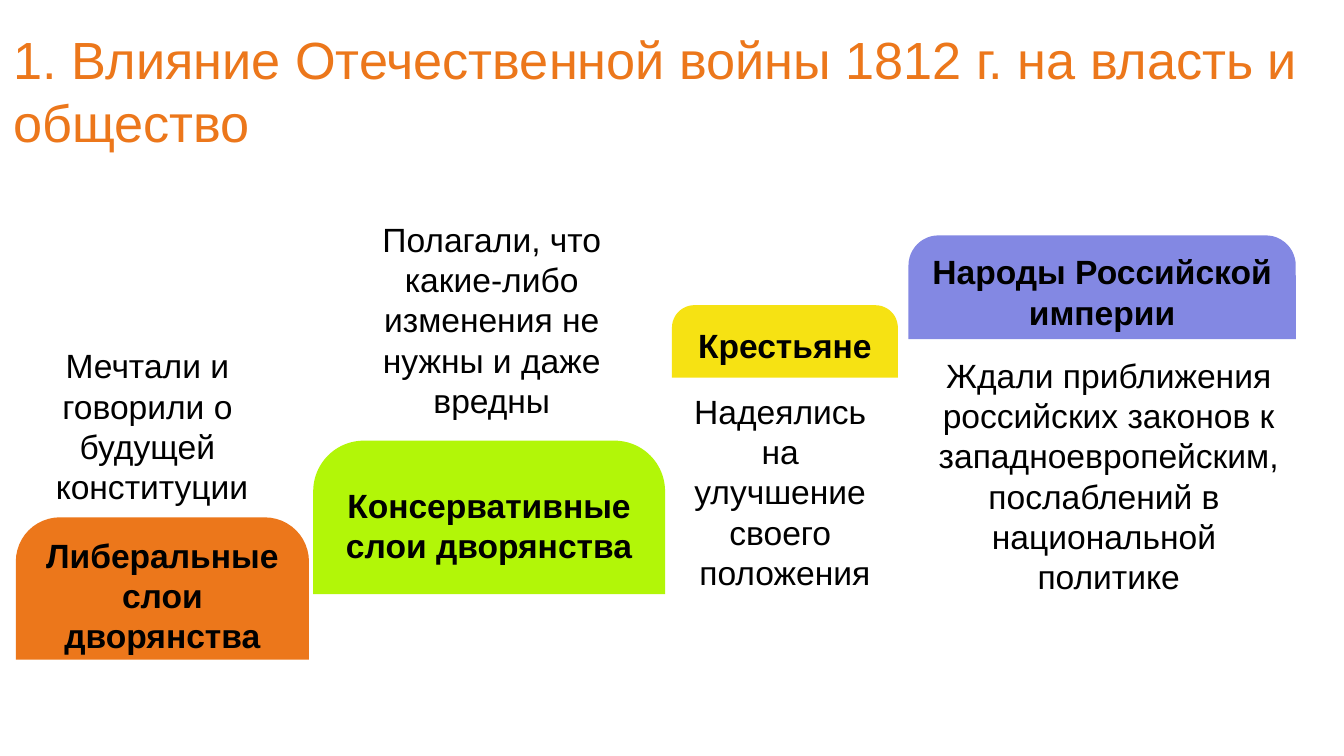
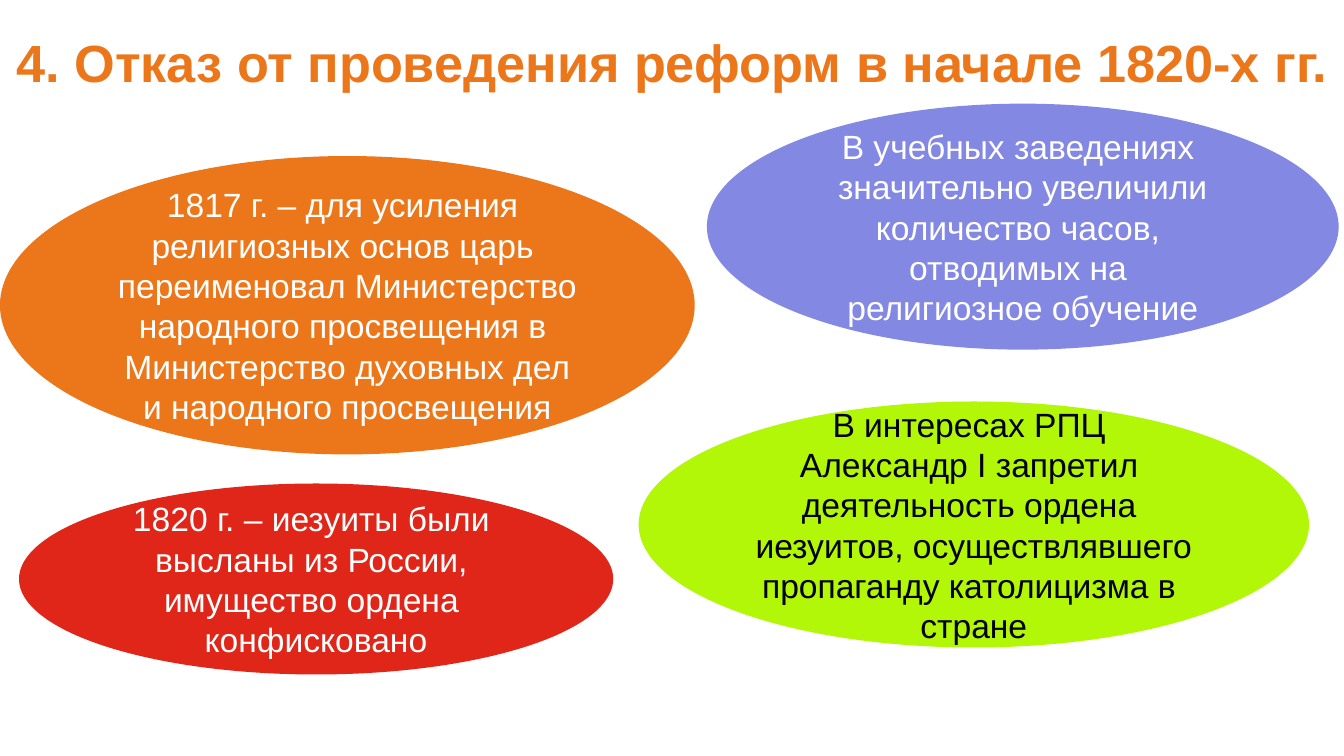
"""Build two slides on Russian society after 1812 and the end of reforms."""
import pptx
import pptx.dml.color
import pptx.enum.shapes
import pptx.enum.text
import pptx.util

Cm = pptx.util.Cm
ALIGN = pptx.enum.text.PP_ALIGN
ANCHOR = pptx.enum.text.MSO_ANCHOR
PRESET = pptx.enum.shapes.MSO_SHAPE

COLOURS = {
    "orange": "EC771B",
    "lime": "B2F608",
    "yellow": "F6E213",
    "violet": "8388E3",
    "red": "DF2619",
    "black": "000000",
    "white": "FFFFFF",
}


def write(box, lines, colour, size=18, bold=False, align=ALIGN.CENTER, anchor=ANCHOR.MIDDLE):
    """Fill a box with one paragraph per line."""
    frame = box.text_frame
    frame.word_wrap = True
    frame.vertical_anchor = anchor
    frame.text = "\n".join(lines)
    for paragraph in frame.paragraphs:
        paragraph.alignment = align
        paragraph.font.name = "Arial"
        paragraph.font.size = pptx.util.Pt(size)
        paragraph.font.bold = bold
        paragraph.font.color.rgb = pptx.dml.color.RGBColor.from_string(COLOURS[colour])


def add_block(slide, preset, place, fill):
    """Add a flat, borderless preset shape."""
    block = slide.shapes.add_shape(preset, *map(Cm, place))
    block.shadow.inherit = False
    block.fill.solid()
    block.fill.fore_color.rgb = pptx.dml.color.RGBColor.from_string(COLOURS[fill])
    block.line.fill.background()
    return block


deck = pptx.Presentation()
deck.slide_width = Cm(25.4)
deck.slide_height = Cm(14.29)

headings = [
    ("1. Влияние Отечественной войны 1812 г. на власть и общество", 2.69, False, ALIGN.LEFT),
    ("4. Отказ от проведения реформ в начале 1820-х гг.", 1.6, True, ALIGN.CENTER),
]
slides = []
for heading, height, bold, align in headings:
    slide = deck.slides.add_slide(deck.slide_layouts[6])
    title = slide.shapes.add_textbox(0, Cm(0.36), deck.slide_width, Cm(height))
    write(title, [heading], "orange", 28, bold, align)
    slides.append(slide)
society, reaction = slides

expectations = [
    ((17.45, 6.58, 7.01, 4.88), [
        "Ждали приближения российских законов к западноевропейским, послаблений в ",
        "национальной ",
        "политике",
    ]),
    ((12.5, 7.26, 4.67, 4.11), ["Надеялись ", "на ", "улучшение ", "своего ", "положения"]),
    ((6.45, 4.01, 5.69, 4.11), ["Полагали, что какие-либо изменения не нужны и даже вредны"]),
    ((0.69, 6.4, 4.37, 3.33), ["Мечтали и ", "говорили о ", "будущей ", "конституции"]),
]
for place, lines in expectations:
    expectation = society.shapes.add_textbox(*map(Cm, place))
    write(expectation, lines, "black", anchor=ANCHOR.TOP)
    expectation.text_frame.auto_size = pptx.enum.text.MSO_AUTO_SIZE.SHAPE_TO_FIT_TEXT

groups = [
    ((0.3, 9.78, 5.54, 2.69), 0.31, "orange", "Либеральные слои дворянства"),
    ((5.92, 8.33, 6.65, 2.9), 0.33, "lime", "Консервативные слои дворянства"),
    ((12.7, 5.77, 4.27, 1.37), 0.31, "yellow", "Крестьяне"),
    ((17.17, 4.45, 7.32, 1.96), 0.29, "violet", "Народы Российской империи"),
]
for place, rounding, fill, name in groups:
    group = add_block(society, PRESET.ROUND_2_SAME_RECTANGLE, place, fill)
    group.adjustments[0] = rounding
    group.adjustments[1] = 0
    write(group, [name], "black", bold=True)

measures = [
    ((13.36, 1.96, 11.94, 4.65), "violet", "white", [
        "В учебных заведениях ",
        "значительно увеличили количество часов, ",
        "отводимых на ",
        "религиозное обучение",
    ]),
    ((0, 2.95, 13.13, 5.64), "orange", "white", [
        "1817 г. – для усиления ",
        "религиозных основ царь ",
        "переименовал Министерство народного просвещения в ",
        "Министерство духовных дел и народного просвещения",
    ]),
    ((12.07, 7.59, 12.67, 4.65), "lime", "black", [
        "В интересах РПЦ ",
        "Александр I запретил ",
        "деятельность ордена ",
        "иезуитов, осуществлявшего пропаганду католицизма в ",
        "стране",
    ]),
    ((0.36, 9.14, 11.23, 3.61), "red", "white", [
        "1820 г. – иезуиты были ",
        "высланы из России, ",
        "имущество ордена ",
        "конфисковано",
    ]),
]
for place, fill, ink, lines in measures:
    measure = add_block(reaction, PRESET.OVAL, place, fill)
    write(measure, lines, ink)

deck.save("out.pptx")
